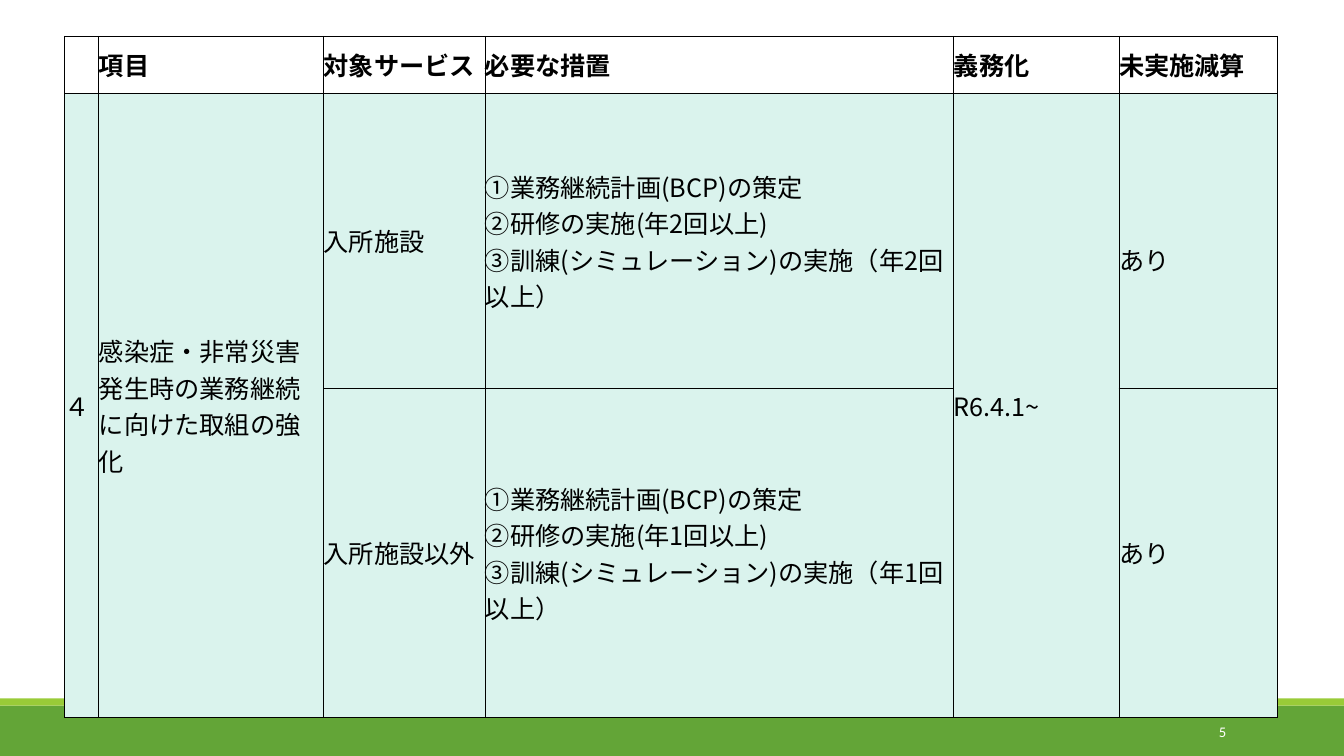
from lxml import etree
from pptx import Presentation
from pptx.dml.color import RGBColor
from pptx.enum import lang, shapes, text
from pptx.oxml import ns
from pptx.util import Inches, Pt

JAPANESE_FONT = "Noto Sans CJK JP"
BLACK, WHITE = "000000", "FFFFFF"
MINT = "DAF3ED"
COLUMN_WIDTHS = [0.34, 2.23, 1.6, 4.65, 1.64, 1.57]
ROW_HEIGHTS = [0.57, 2.92, 3.27]
HEADINGS = ["", "項目", "対象サービス", "必要な措置", "義務化", "未実施減算"]
MERGED_COLUMNS = [0, 1, 4]


def color(value):
    return RGBColor.from_string(value)


def measures(times):
    return (
        "①業務継続計画(BCP)の策定\n"
        f"②研修の実施(年{times}回以上)\n"
        f"③訓練(シミュレーション)の実施（年{times}回以上）"
    )


def add_band(slide, top, height, fill):
    band = slide.shapes.add_shape(
        shapes.MSO_SHAPE.RECTANGLE, 0, Inches(top), Inches(13.33), Inches(height))
    band.shadow.inherit = False
    band.fill.solid()
    band.fill.fore_color.rgb = color(fill)
    band.line.fill.background()


def add_run(paragraph, words, size, font_name, fill, bold=False):
    run = paragraph.add_run()
    run.text = words
    font = run.font
    font.size = Pt(size)
    font.name = font_name
    font.bold = bold
    font.color.rgb = color(fill)
    return run


def add_japanese_run(paragraph, words, bold):
    run = add_run(paragraph, words, 18, JAPANESE_FONT, BLACK, bold)
    run.font.language_id = lang.MSO_LANGUAGE_ID.JAPANESE
    properties = run.font._element
    etree.SubElement(properties, ns.qn("a:ea"), typeface=JAPANESE_FONT)


def add_borders(cell):
    properties = cell._tc.get_or_add_tcPr()
    for side in ("a:lnL", "a:lnR", "a:lnT", "a:lnB"):
        line = etree.SubElement(properties, ns.qn(side), w=str(Pt(0.75)))
        fill = etree.SubElement(line, ns.qn("a:solidFill"))
        etree.SubElement(fill, ns.qn("a:srgbClr"), val=BLACK)


def fill_cell(cell, words, fill, bold):
    add_borders(cell)
    cell.fill.solid()
    cell.fill.fore_color.rgb = color(fill)
    cell.margin_left = cell.margin_right = 0
    cell.margin_top = cell.margin_bottom = 0
    cell.vertical_anchor = text.MSO_ANCHOR.MIDDLE
    if not words:
        return
    for index, line in enumerate(words.split("\n")):
        frame = cell.text_frame
        paragraph = frame.add_paragraph() if index else frame.paragraphs[0]
        add_japanese_run(paragraph, line, bold)


def add_measures_table(slide):
    rows = [
        HEADINGS,
        ["４", "感染症・非常災害発生時の業務継続\nに向けた取組の強化",
         "入所施設", measures(2), "R6.4.1~", "あり"],
        ["", "", "入所施設以外", measures(1), "", "あり"],
    ]
    frame = slide.shapes.add_table(
        len(rows), len(HEADINGS), Inches(0.64), Inches(0.36),
        Inches(sum(COLUMN_WIDTHS)), Inches(sum(ROW_HEIGHTS)))
    table = frame.table
    table.first_row = table.horz_banding = False
    for column, width in zip(table.columns, COLUMN_WIDTHS):
        column.width = Inches(width)
    for row, height in zip(table.rows, ROW_HEIGHTS):
        row.height = Inches(height)
    for column in MERGED_COLUMNS:
        table.cell(1, column).merge(table.cell(2, column))

    for row, entries in enumerate(rows):
        is_heading = row == 0
        for column, words in enumerate(entries):
            fill_cell(table.cell(row, column), words,
                      WHITE if is_heading else MINT, is_heading)
    # The upper reduction entry sits half a line below the middle
    table.cell(1, 5).margin_top = Inches(0.36)


def add_page_number(slide, number):
    box = slide.shapes.add_textbox(
        Inches(10.83), Inches(7.06), Inches(1.43), Inches(0.4))
    frame = box.text_frame
    frame.word_wrap = True
    frame.vertical_anchor = text.MSO_ANCHOR.MIDDLE
    paragraph = frame.paragraphs[0]
    paragraph.alignment = text.PP_ALIGN.RIGHT
    add_run(paragraph, number, 10.5, "Calibri", WHITE)


def main():
    presentation = Presentation()
    presentation.slide_width = Inches(13.33)
    presentation.slide_height = Inches(7.5)
    slide = presentation.slides.add_slide(presentation.slide_layouts[6])

    # Footer bands
    add_band(slide, 7, 0.5, "63A537")
    add_band(slide, 6.93, 0.07, "99CB38")

    # Table and page number
    add_measures_table(slide)
    add_page_number(slide, "5")

    presentation.save("out.pptx")


if __name__ == "__main__":
    main()
